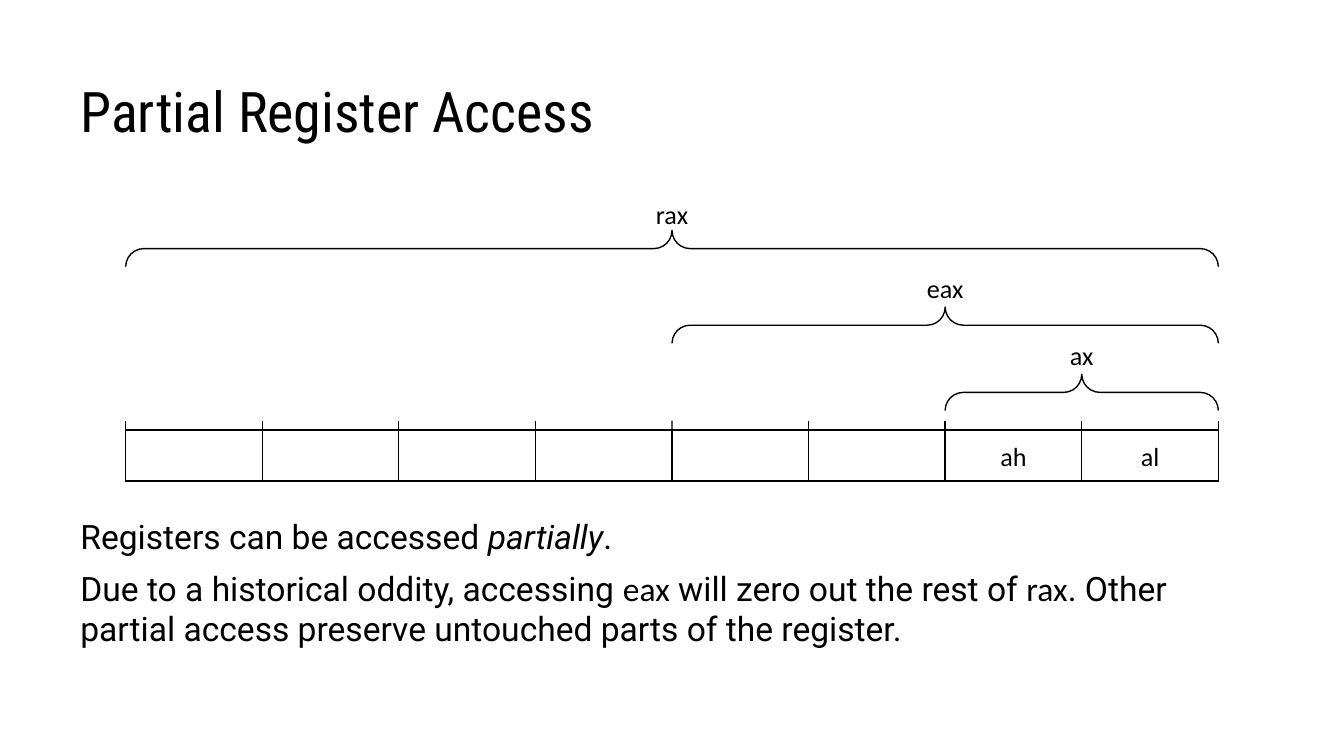
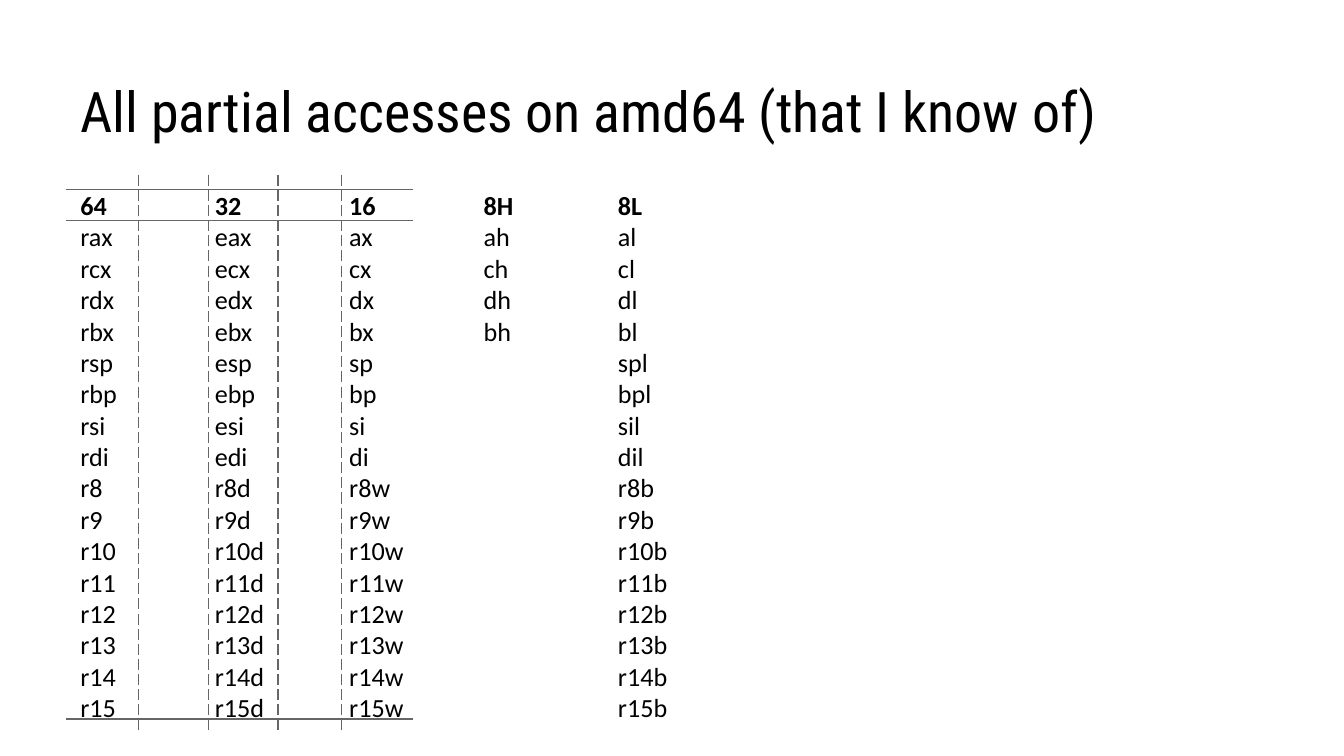
import pptx
import pptx.util
import pptx.dml.color
import pptx.enum.dml
import pptx.enum.shapes
import pptx.enum.text
import pptx.oxml.ns
import lxml.etree

Inches = pptx.util.Inches
ALIGN = pptx.enum.text.PP_ALIGN
ANCHOR = pptx.enum.text.MSO_ANCHOR
SHAPE = pptx.enum.shapes.MSO_SHAPE

SLIDE_WIDTH = 10
SLIDE_HEIGHT = SLIDE_WIDTH * 9 / 16
COLORS = {"text": "000000", "rule": "666666", "background": "FFFFFF"}
TITLE_FONT, BODY_FONT, CODE_FONT = "Roboto Condensed", "Roboto", "Calibri"
LINE_WIDTH = 0.75

# Register diagram: eight byte cells in one centred row
BYTES = 8
ROW_WIDTH, ROW_TOP, ROW_HEIGHT = 8.13, 3.2, 0.38
ROW_LEFT = (SLIDE_WIDTH - ROW_WIDTH) / 2
CELL_WIDTH = ROW_WIDTH / BYTES
TICK_TOP, TICK_BOTTOM = 3.13, 3.59
BRACE_DEPTH = 0.27

# Name, first byte, label top, brace centre
SPANS = [("rax", 0, 1.4, 1.85), ("eax", 4, 1.95, 2.42), ("ax", 6, 2.45, 2.92)]

# Register names by width
HEADER = ["64", "32", "16", "8H", "8L"]
LETTERED = [[f"r{x}x", f"e{x}x", f"{x}x", f"{x}h", f"{x}l"] for x in "acdb"]
POINTERS = [[f"r{x}", f"e{x}", x, "", f"{x}l"] for x in ("sp", "bp", "si", "di")]
NUMBERED = [[f"r{n}", f"r{n}d", f"r{n}w", "", f"r{n}b"] for n in range(8, 16)]
TAB_WIDTH = 1


def color(name):
    return pptx.dml.color.RGBColor.from_string(COLORS[name])


def write_text(shape, paragraphs, size=14, font=CODE_FONT, align=ALIGN.LEFT,
               anchor=ANCHOR.TOP, space_before=0):
    """Fill a shape; each paragraph is a list of (text, format) runs."""
    frame = shape.text_frame
    frame.word_wrap = True
    frame.vertical_anchor = anchor
    frame.margin_left = frame.margin_right = Inches(0.1)
    frame.margin_top = frame.margin_bottom = Inches(0.1)
    for index, runs in enumerate(paragraphs):
        paragraph = frame.add_paragraph() if index else frame.paragraphs[0]
        paragraph.alignment = align
        paragraph.space_before = pptx.util.Pt(space_before)
        for text, style in runs:
            run = paragraph.add_run()
            run.text = text
            run.font.size = pptx.util.Pt(size)
            run.font.name = style.get("font", font)
            run.font.bold = style.get("bold", False)
            run.font.italic = style.get("italic", False)
            run.font.color.rgb = color("text")


def add_text(slide, left, top, width, height, paragraphs, **style):
    box = slide.shapes.add_textbox(
        Inches(left), Inches(top), Inches(width), Inches(height))
    write_text(box, paragraphs, **style)
    return box


def add_outline(slide, kind, left, top, width, height):
    shape = slide.shapes.add_shape(
        kind, Inches(left), Inches(top), Inches(width), Inches(height))
    shape.shadow.inherit = False
    shape.fill.background()
    shape.line.color.rgb = color("text")
    shape.line.width = pptx.util.Pt(LINE_WIDTH)
    return shape


def add_line(slide, x1, y1, x2, y2, line_color, dash=None):
    line = slide.shapes.add_connector(
        pptx.enum.shapes.MSO_CONNECTOR.STRAIGHT,
        Inches(x1), Inches(y1), Inches(x2), Inches(y2))
    line.line.color.rgb = color(line_color)
    line.line.width = pptx.util.Pt(LINE_WIDTH)
    if dash:
        line.line.dash_style = dash
    lxml.etree.SubElement(line._element.spPr, pptx.oxml.ns.qn("a:effectLst"))
    return line


def add_brace(slide, left, center, width):
    """Brace pointing up: a left brace turned a quarter around its centre."""
    brace = add_outline(slide, SHAPE.LEFT_BRACE,
                        left + (width - BRACE_DEPTH) / 2, center - width / 2,
                        BRACE_DEPTH, width)
    brace.rotation = 90
    brace.adjustments[0] = brace.adjustments[1] = 0.5


def set_tabs(box, count):
    for paragraph in box.text_frame.paragraphs:
        properties = paragraph._p.get_or_add_pPr()
        tabs = lxml.etree.SubElement(properties, pptx.oxml.ns.qn("a:tabLst"))
        for number in range(1, count + 1):
            lxml.etree.SubElement(tabs, pptx.oxml.ns.qn("a:tab"),
                                  pos=str(Inches(number * TAB_WIDTH)), algn="l")


def add_titled_slide(presentation, title):
    slide = presentation.slides.add_slide(presentation.slide_layouts[6])
    slide.background.fill.solid()
    slide.background.fill.fore_color.rgb = color("background")
    add_text(slide, 0.5, 0.23, 9, 0.94, [[(title, {})]],
             size=30, font=TITLE_FONT, anchor=ANCHOR.BOTTOM)
    return slide


def cell_left(index):
    return ROW_LEFT + index * CELL_WIDTH


def add_cells(slide, first, count, label=None):
    cells = add_outline(slide, SHAPE.RECTANGLE, cell_left(first), ROW_TOP,
                        count * CELL_WIDTH, ROW_HEIGHT)
    if label:
        write_text(cells, [[(label, {})]], align=ALIGN.CENTER, anchor=ANCHOR.MIDDLE)
    return cells


def build_register_slide(presentation):
    slide = add_titled_slide(presentation, "Partial Register Access")

    # Byte row and its dividers
    middle_of = {4: add_cells(slide, 0, BYTES), 6: add_cells(slide, 4, 4)}
    add_cells(slide, 6, 1, "ah")
    add_cells(slide, 7, 1, "al")
    for index in range(BYTES + 1):
        x = cell_left(index)
        divider = add_line(slide, x, TICK_BOTTOM, x, TICK_TOP, "text")
        if index in middle_of:
            divider.begin_connect(middle_of[index], 2)

    # Braces and register names
    for name, first, label_top, brace_center in SPANS:
        width = (BYTES - first) * CELL_WIDTH
        add_brace(slide, cell_left(first), brace_center, width)
        add_text(slide, cell_left(first) + (width - CELL_WIDTH) / 2, label_top,
                 CELL_WIDTH, 0.38, [[(name, {})]],
                 align=ALIGN.CENTER, anchor=ANCHOR.MIDDLE)

    # Explanation
    code = {"font": CODE_FONT}
    add_text(slide, 0.5, 3.74, 9, 1.65, [
        [("Registers can be accessed ", {}), ("partially", {"italic": True}), (".", {})],
        [("Due to a historical oddity, accessing ", {}), ("eax", code),
         (" will zero out the rest of ", {}), ("rax", code),
         (". Other partial access preserve untouched parts of the register.", {})],
    ], size=18, font=BODY_FONT, space_before=6)


def build_names_slide(presentation):
    slide = add_titled_slide(
        presentation, "All partial accesses on amd64 (that I know of)")

    # Tabbed list of names
    rows = [HEADER] + LETTERED + POINTERS + NUMBERED
    paragraphs = [[("\t".join(row), {"bold": row is HEADER})] for row in rows]
    names = add_text(slide, 0.5, 1.31, 9, 4.07, paragraphs)
    set_tabs(names, len(HEADER) - 1)

    # Rules
    for y in (1.64, 1.41, 5.35):
        add_line(slide, 0.49, y, 3.07, y, "rule")
    for x in (1.03, 1.55, 2.07, 2.54):
        add_line(slide, x, 1.3, x, 5.46, "rule",
                 dash=pptx.enum.dml.MSO_LINE.LONG_DASH)


def main():
    presentation = pptx.Presentation()
    presentation.slide_width = Inches(SLIDE_WIDTH)
    presentation.slide_height = Inches(SLIDE_HEIGHT)
    build_register_slide(presentation)
    build_names_slide(presentation)
    presentation.save("out.pptx")


if __name__ == "__main__":
    main()
